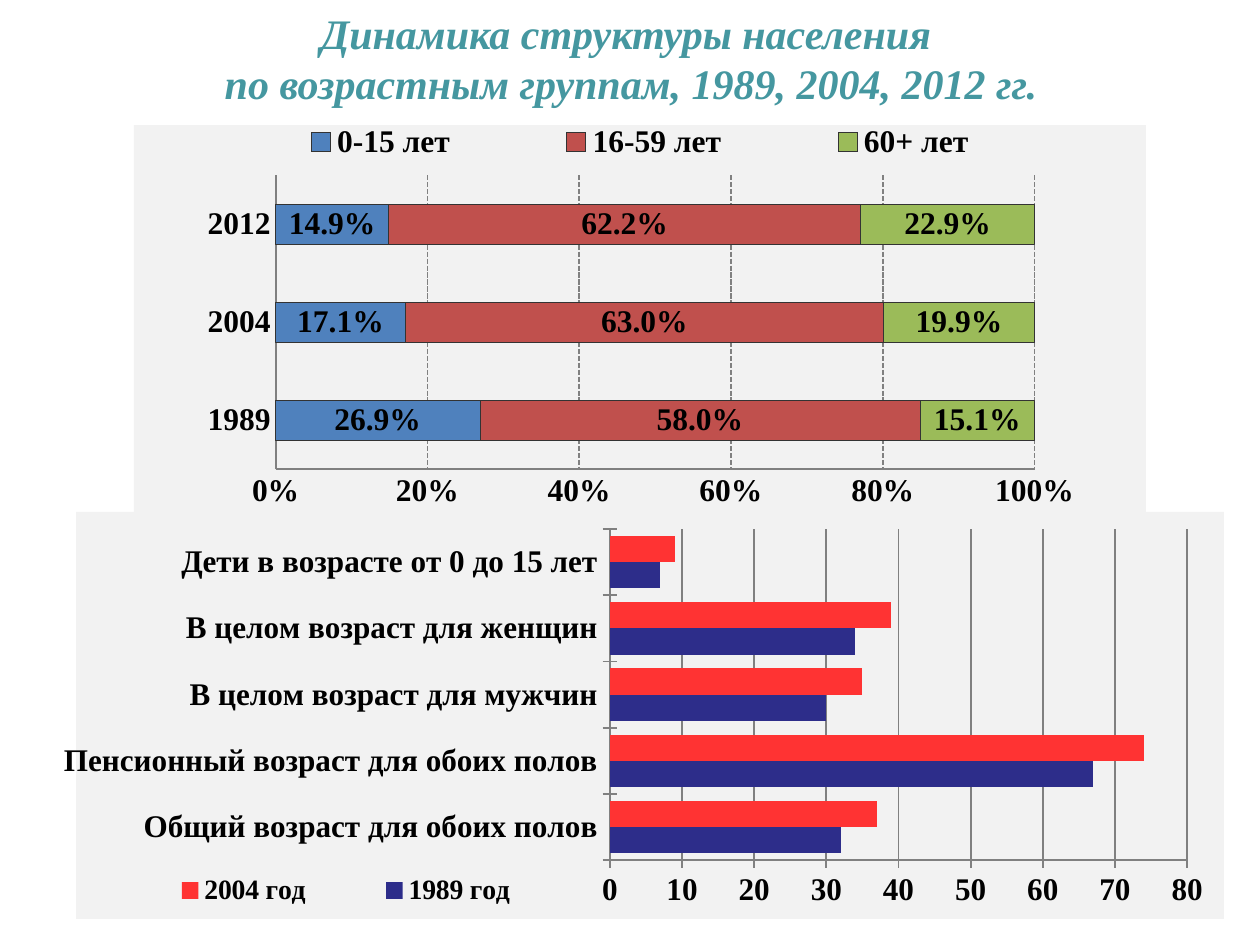
from lxml import etree
from pptx import Presentation
from pptx.chart.data import CategoryChartData
from pptx.dml.color import RGBColor
from pptx.enum.chart import XL_CHART_TYPE as ChartType
from pptx.enum.chart import XL_LABEL_POSITION as LabelPos
from pptx.enum.chart import XL_LEGEND_POSITION as LegendPos
from pptx.enum.chart import XL_TICK_MARK as Tick
from pptx.enum.dml import MSO_LINE_DASH_STYLE as Dash
from pptx.enum.text import MSO_ANCHOR as Anchor
from pptx.enum.text import PP_ALIGN as Align
from pptx.oxml import parse_xml
from pptx.oxml.ns import qn
from pptx.util import Emu, Pt

PX = 914400 // 126
FONT = "Times New Roman"
GRAY = "808080"
A_NS = 'xmlns:a="http://schemas.openxmlformats.org/drawingml/2006/main"'


def px(length):
    return Emu(length * PX)


def rgb(code):
    return RGBColor.from_string(code)


def solid_xml(code):
    return f'<a:solidFill {A_NS}><a:srgbClr val="{code}"/></a:solidFill>'


def set_font(font, size, color="000000", bold=True, italic=False):
    font.name, font.size = FONT, Pt(size)
    font.bold, font.italic = bold, italic
    font.color.rgb = rgb(color)


def set_line(line, color, width, dash=None):
    line.color.rgb = rgb(color)
    line.width = Pt(width)
    if dash:
        line.dash_style = dash


def add_text(slide, box, lines, outline=None, **style):
    frame = slide.shapes.add_textbox(*map(px, box)).text_frame
    frame.word_wrap = True
    frame.vertical_anchor = Anchor.MIDDLE
    paragraph = frame.paragraphs[0]
    paragraph.alignment = Align.CENTER
    for index, line in enumerate(lines):
        if index:
            paragraph.add_line_break()
        run = paragraph.add_run()
        run.text = line
        set_font(run.font, **style)
        if outline:
            color, width = outline
            run.font._element.insert(0, parse_xml(
                f'<a:ln {A_NS} w="{Pt(width)}">{solid_xml(color)}</a:ln>'))


def fill_gradient(series, edge, middle):
    properties = series.format._element if hasattr(series.format, "_element") else series._element.get_or_add_spPr()
    stops = "".join(f'<a:gs pos="{pos}"><a:srgbClr val="{code}"/></a:gs>'
                    for pos, code in ((0, edge), (50000, middle), (100000, edge)))
    properties.insert(0, parse_xml(
        f'<a:gradFill {A_NS} rotWithShape="0"><a:gsLst>{stops}</a:gsLst>'
        '<a:lin ang="5400000" scaled="1"/></a:gradFill>'))


def set_layout(parent, position, inner=False):
    for old in parent.findall(qn("c:layout")):
        parent.remove(old)
    layout = etree.Element(qn("c:layout"))
    manual = etree.SubElement(layout, qn("c:manualLayout"))
    settings = [("layoutTarget", "inner")] if inner else []
    settings += [("xMode", "edge"), ("yMode", "edge")]
    settings += zip("xywh", map(str, position))
    for tag, value in settings:
        etree.SubElement(manual, qn(f"c:{tag}")).set("val", value)
    if inner:
        parent.insert(0, layout)
    else:
        parent.find(qn("c:legendPos")).addnext(layout)


def add_bar_chart(slide, box, kind, categories, values, plot_box, legend_box,
                  legend_side, legend_size, gap, overlap, tick, number_format):
    data = CategoryChartData(number_format=number_format)
    data.categories = categories
    for name, numbers in values.items():
        data.add_series(name, numbers)
    chart = slide.shapes.add_chart(kind, *map(px, box), data).chart
    set_font(chart.font, 18)
    chart.has_title = False
    chart._chartSpace.chart.addnext(parse_xml(
        '<c:spPr xmlns:c="http://schemas.openxmlformats.org/drawingml/2006/chart">'
        f'{solid_xml("F2F2F2")}<a:ln {A_NS}><a:noFill/></a:ln></c:spPr>'))
    chart.has_legend = True
    chart.legend.position = legend_side
    chart.legend.include_in_layout = False
    set_font(chart.legend.font, legend_size)
    set_layout(chart.legend._element, legend_box)
    set_layout(chart._chartSpace.chart.plotArea, plot_box, inner=True)
    plot = chart.plots[0]
    plot.vary_by_categories = False
    plot.gap_width, plot.overlap = gap, overlap
    for axis in (chart.category_axis, chart.value_axis):
        axis.major_tick_mark, axis.minor_tick_mark = tick, Tick.NONE
        set_font(axis.tick_labels.font, 18)
        set_line(axis.format.line, GRAY, 1)
    chart.value_axis.has_major_gridlines = True
    for series in plot.series:
        series.invert_if_negative = False
    return chart


def add_age_structure(slide, box):
    shares = {
        "0-15 лет": (0.269, 0.171, 0.149),
        "16-59 лет": (0.58, 0.63, 0.622),
        "60+ лет": (0.151, 0.199, 0.229),
    }
    gradients = (("8484DC", "9999FF"), ("3366FF", "AAB5FF"), ("333399", "C1C1D6"))
    chart = add_bar_chart(
        slide, box, ChartType.BAR_STACKED_100, ("1989", "2004", "2012"), shares,
        plot_box=(0.14, 0.13, 0.75, 0.76), legend_box=(0.07, 0, 0.86, 0.09),
        legend_side=LegendPos.TOP, legend_size=18, gap=150, overlap=100,
        tick=Tick.NONE, number_format="0.0%")
    axis = chart.value_axis
    axis.major_unit = 0.2
    axis.tick_labels.number_format = "0%"
    axis.tick_labels.number_format_is_linked = False
    set_line(axis.major_gridlines.format.line, GRAY, 1, Dash.SQUARE_DOT)
    for series, (edge, middle) in zip(chart.plots[0].series, gradients):
        set_line(series.format.line, "333333", 0.25)
        fill_gradient(series, edge, middle)
        labels = series.data_labels
        labels.show_value = True
        labels.position = LabelPos.CENTER
        labels.number_format = "0.0%"
        labels.number_format_is_linked = False
        set_font(labels.font, 18)


def add_average_age(slide, box):
    groups = ("Общий возраст для обоих полов", "Пенсионный возраст для обоих полов",
              "В целом возраст для мужчин", "В целом возраст для женщин",
              "Дети в возрасте от 0 до 15 лет")
    ages = {"1989 год": (32, 67, 30, 34, 7), "2004 год": (37, 74, 35, 39, 9)}
    chart = add_bar_chart(
        slide, box, ChartType.BAR_CLUSTERED, groups, ages,
        plot_box=(0.465, 0.042, 0.503, 0.814), legend_box=(0.03, 0.88, 0.41, 0.1),
        legend_side=LegendPos.BOTTOM, legend_size=16, gap=53, overlap=0,
        tick=Tick.CROSS, number_format="General")
    set_line(chart.value_axis.major_gridlines.format.line, GRAY, 1)
    for series, color in zip(chart.plots[0].series, ("2D2D8A", "FF3333")):
        series.format.fill.solid()
        series.format.fill.fore_color.rgb = rgb(color)


def main():
    deck = Presentation()
    deck.slide_width, deck.slide_height = px(1260), px(945)
    slide = deck.slides.add_slide(deck.slide_layouts[6])
    add_text(slide, (78, 0, 1106, 116),
             ("Динамика структуры населения ", "по возрастным группам, 1989, 2004, 2012 гг."),
             outline=("224B50", 0.75), size=24, color="4597A0", italic=True)
    add_age_structure(slide, (134, 125, 1012, 387))
    add_average_age(slide, (64, 512, 1160, 407))
    deck.save("out.pptx")


if __name__ == "__main__":
    main()
